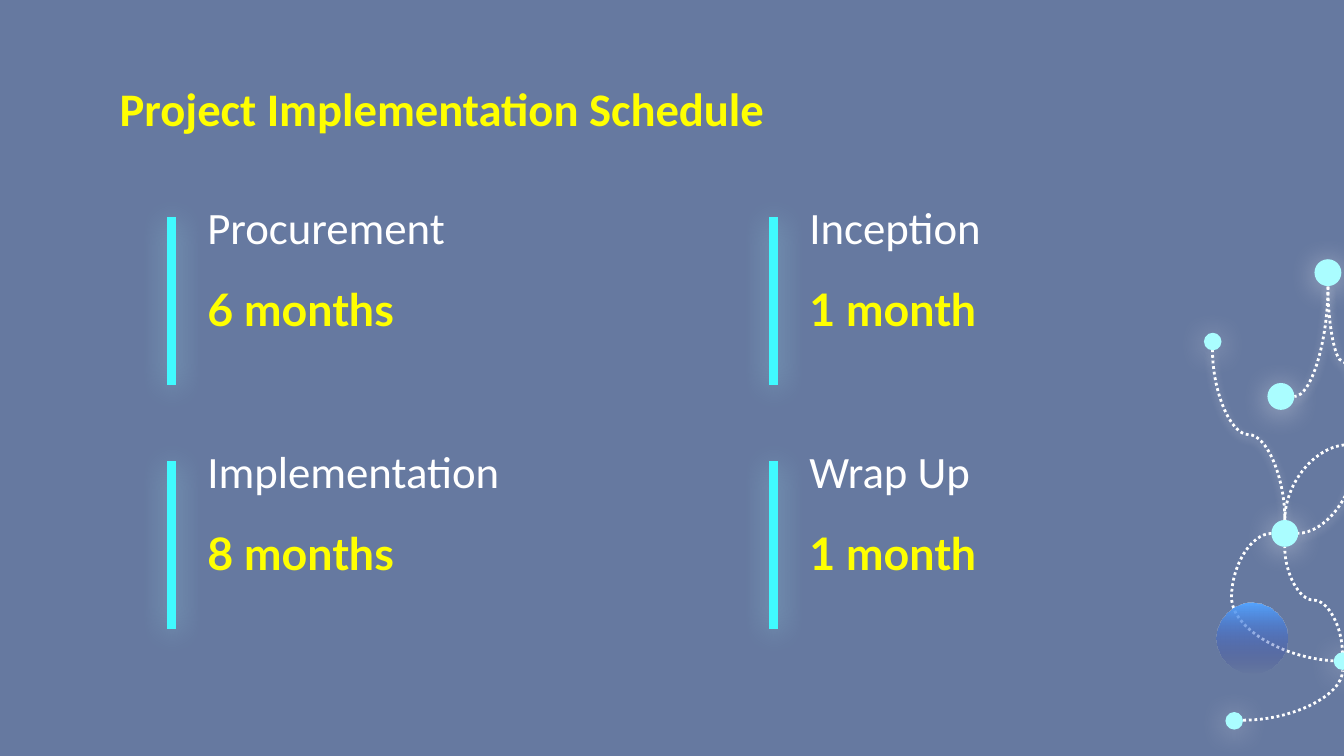
from lxml import etree
from pptx import Presentation
from pptx.dml import color
from pptx.enum import dml, shapes, text
from pptx.oxml import ns
from pptx.util import Pt

WHITE, YELLOW, AQUA, PALE_AQUA = "FFFFFF", "FFFF00", "40FAFF", "AAFDFF"


def rgb(code):
    return color.RGBColor.from_string(code)


def add_glow(shape, code=None, blur=15.8):
    """Replace the theme shadow with a soft glow, or with none."""
    properties = shape._element.spPr
    for old in properties.findall(ns.qn("a:effectLst")):
        properties.remove(old)
    effects = etree.SubElement(properties, ns.qn("a:effectLst"))
    if code:
        glow = etree.SubElement(effects, ns.qn("a:outerShdw"), blurRad=str(Pt(blur)),
                                dist=str(Pt(1.5)), dir="5400000", algn="bl",
                                rotWithShape="0")
        tint = etree.SubElement(glow, ns.qn("a:srgbClr"), val=code)
        etree.SubElement(tint, ns.qn("a:alpha"), val="50000")


def add_label(slide, box, wording, size, font, code, bold=False,
              anchor=text.MSO_ANCHOR.TOP):
    frame = slide.shapes.add_textbox(*map(Pt, box)).text_frame
    frame.word_wrap = True
    frame.vertical_anchor = anchor
    frame.margin_left = frame.margin_right = Pt(7.2)
    frame.margin_top = frame.margin_bottom = Pt(7.2)
    run = frame.paragraphs[0].add_run()
    run.text = wording
    run.font.size = Pt(size)
    run.font.name = font
    run.font.bold = bold
    run.font.color.rgb = rgb(code)


def add_circle(slide, left, top, diameter):
    circle = slide.shapes.add_shape(shapes.MSO_SHAPE.OVAL, Pt(left), Pt(top),
                                    Pt(diameter), Pt(diameter))
    circle.line.fill.background()
    circle.shadow.inherit = False
    return circle


def add_path(slide, start, end, upright, bends, adjust=None, glowing=False):
    """Dotted curve; an upright one leaves its start vertically."""
    (x1, y1), (x2, y2) = start, end
    dx, dy = x2 - x1, y2 - y1
    if upright:
        # Lay the curve flat around its centre, then turn it by a quarter
        half_w, half_h = abs(dy) / 2, abs(dx) / 2
        if dx * dy > 0:
            half_w = -half_w
        mid_x, mid_y = (x1 + x2) / 2, (y1 + y2) / 2
        x1, y1, x2, y2 = mid_x - half_w, mid_y - half_h, mid_x + half_w, mid_y + half_h
    path = slide.shapes.add_connector(shapes.MSO_CONNECTOR.CURVE,
                                      Pt(x1), Pt(y1), Pt(x2), Pt(y2))
    properties = path._element.spPr
    if upright:
        turn = 90 if dx < 0 else 270
        properties.find(ns.qn("a:xfrm")).set("rot", str(turn * 60000))
    geometry = properties.find(ns.qn("a:prstGeom"))
    geometry.set("prst", f"curvedConnector{bends + 1}")
    if adjust is not None:
        guides = geometry.find(ns.qn("a:avLst"))
        if guides is None:
            guides = etree.SubElement(geometry, ns.qn("a:avLst"))
        etree.SubElement(guides, ns.qn("a:gd"), name="adj1",
                         fmla=f"val {round(adjust * 100000)}")
    path.line.color.rgb = rgb(WHITE)
    path.line.width = Pt(1.5)
    path.line.dash_style = dml.MSO_LINE.ROUND_DOT
    add_glow(path, WHITE if glowing else None, 4.5)


def add_network(slide, left, top):
    def at(x, y):
        return left + x, top + y

    # Dotted paths: start, end, upright, bends, adjustment, glow
    paths = [
        ((43.3, 139.6), (77.2, 99.3), True, 1, None, False),
        ((4.5, 48.2), (43.3, 139.6), True, 2, 0.5, True),
        ((81.5, 94.3), (66.4, 14.4), True, 2, 0.5, True),
        ((81.5, 103.6), (49.8, 146.8), True, 1, None, True),
        ((66.4, 14.4), (48.4, 73.4), True, 1, None, True),
        ((36.1, 146.8), (74.2, 215.2), False, 2, -0.56, False),
        ((21, 246.9), (74.2, 220.3), False, 1, None, False),
        ((74.2, 211), (43.3, 154), True, 2, 0.5, False),
    ]
    for start, end, *style in paths:
        add_path(slide, at(*start), at(*end), *style)

    # Glowing nodes: centre and diameter
    nodes = [(41.2, 73.4, 14.4), (43.3, 146.8, 14.4), (66.4, 7.1, 14.4),
             (4.7, 44, 9.4), (74.2, 215.2, 9.4), (16.2, 247.2, 9.4)]
    for x, y, diameter in nodes:
        node = add_circle(slide, *at(x - diameter / 2, y - diameter / 2), diameter)
        node.fill.solid()
        node.fill.fore_color.rgb = rgb(PALE_AQUA)
        add_glow(node, WHITE)

    # Orb fading out downwards
    orb = add_circle(slide, *at(6.6, 183.6), 38.2)
    orb.fill.gradient()
    orb.fill.gradient_angle = 270
    upper, lower = orb.fill.gradient_stops
    upper.color.rgb = rgb("55A4FF")
    lower.color.rgb = rgb("2E2E8F")
    fading = orb._element.spPr.findall(".//" + ns.qn("a:srgbClr"))[-1]
    etree.SubElement(fading, ns.qn("a:alpha"), val="0")


def add_phase(slide, left, top, height, name, name_width, duration):
    text_left = left + 12
    add_label(slide, (text_left, top - 2.9, name_width, 29.5), name, 24, "Calibri",
              WHITE, anchor=text.MSO_ANCHOR.BOTTOM)
    add_label(slide, (text_left, top + 27.4, 221, 75), duration, 24, "Lato",
              YELLOW, bold=True)
    marker = slide.shapes.add_connector(shapes.MSO_CONNECTOR.STRAIGHT, Pt(left), Pt(top),
                                        Pt(left), Pt(top + height))
    marker.line.color.rgb = rgb(AQUA)
    marker.line.width = Pt(4.5)
    add_glow(marker, PALE_AQUA)


def add_schedule(slide, left, top, column_step, row_step):
    phases = [("Procurement", 238, "6 months"), ("Inception", 221, "1 month"),
              ("Implementation", 273, "8 months"), ("Wrap Up", 293, "1 month")]
    for index, phase in enumerate(phases):
        row, column = divmod(index, 2)
        add_phase(slide, left + column * column_step, top + row * row_step, 90, *phase)


def main():
    deck = Presentation()
    deck.slide_width, deck.slide_height = Pt(720), Pt(405)
    slide = deck.slides.add_slide(deck.slide_layouts[6])
    slide.background.fill.solid()
    slide.background.fill.fore_color.rgb = rgb("6679A0")

    add_network(slide, 645, 139)
    add_label(slide, (57, 35.5, 607, 45), "Project Implementation Schedule", 25,
              "Calibri", YELLOW, bold=True)
    add_schedule(slide, 92, 116.5, 322.5, 130.5)
    deck.save("out.pptx")


if __name__ == "__main__":
    main()
